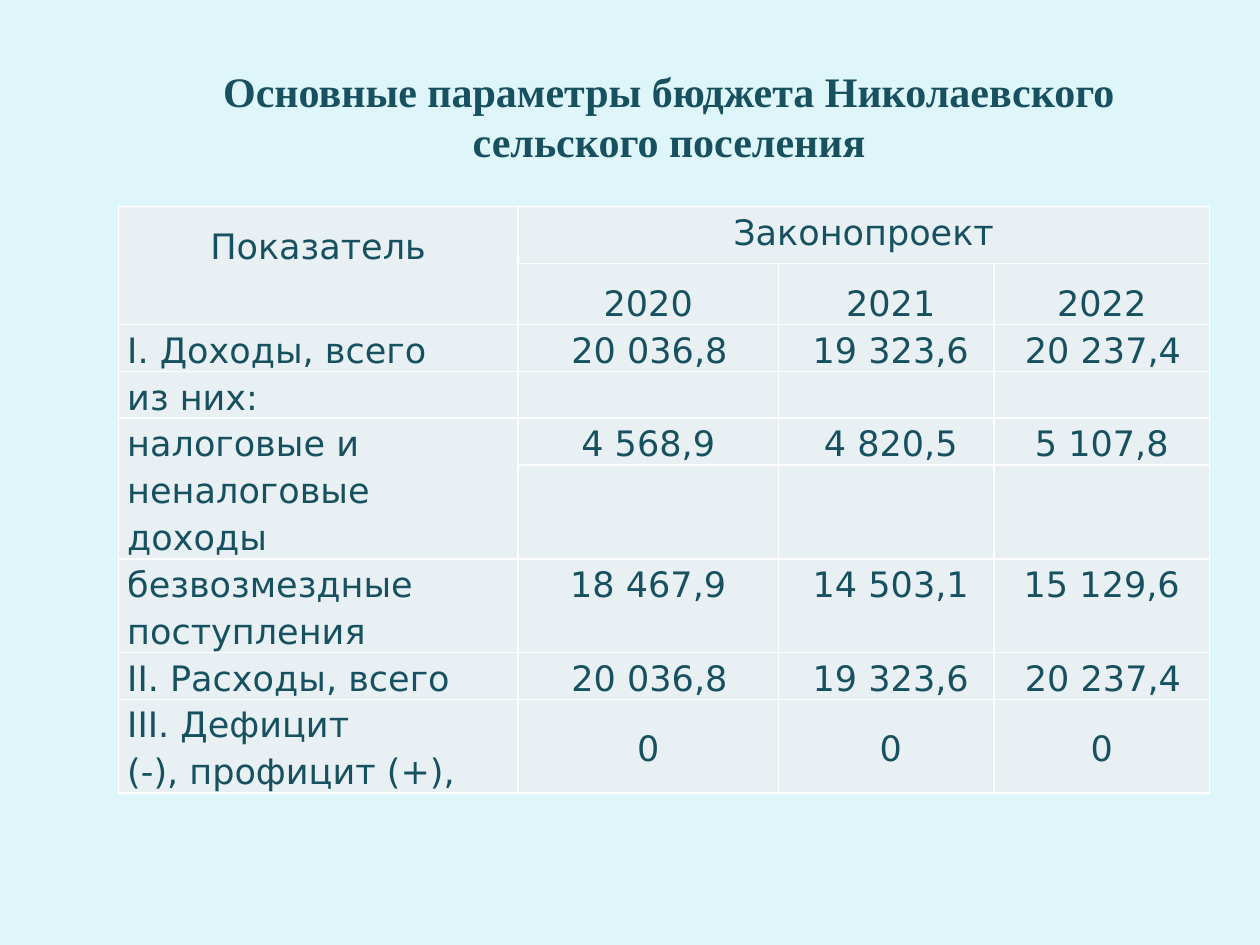
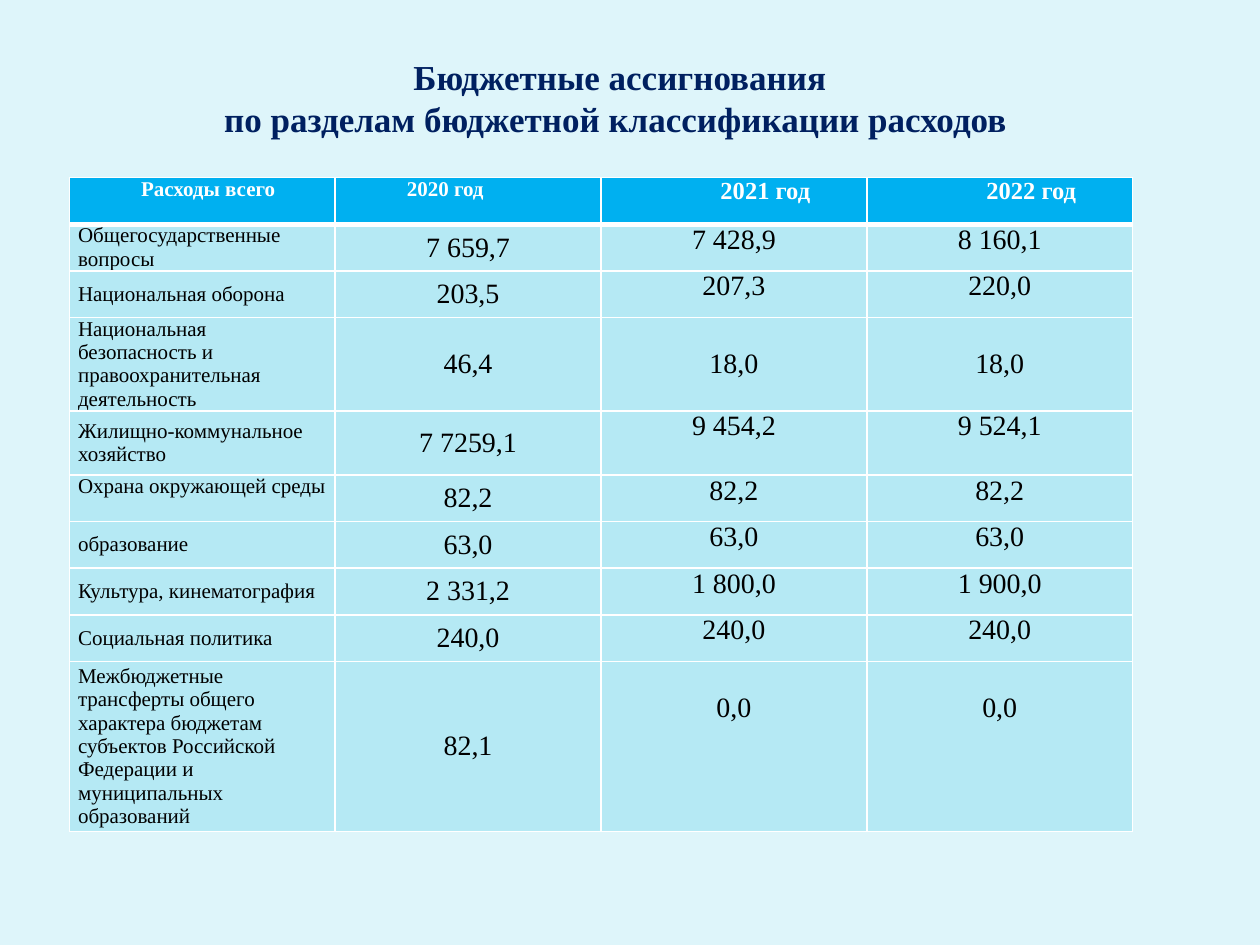
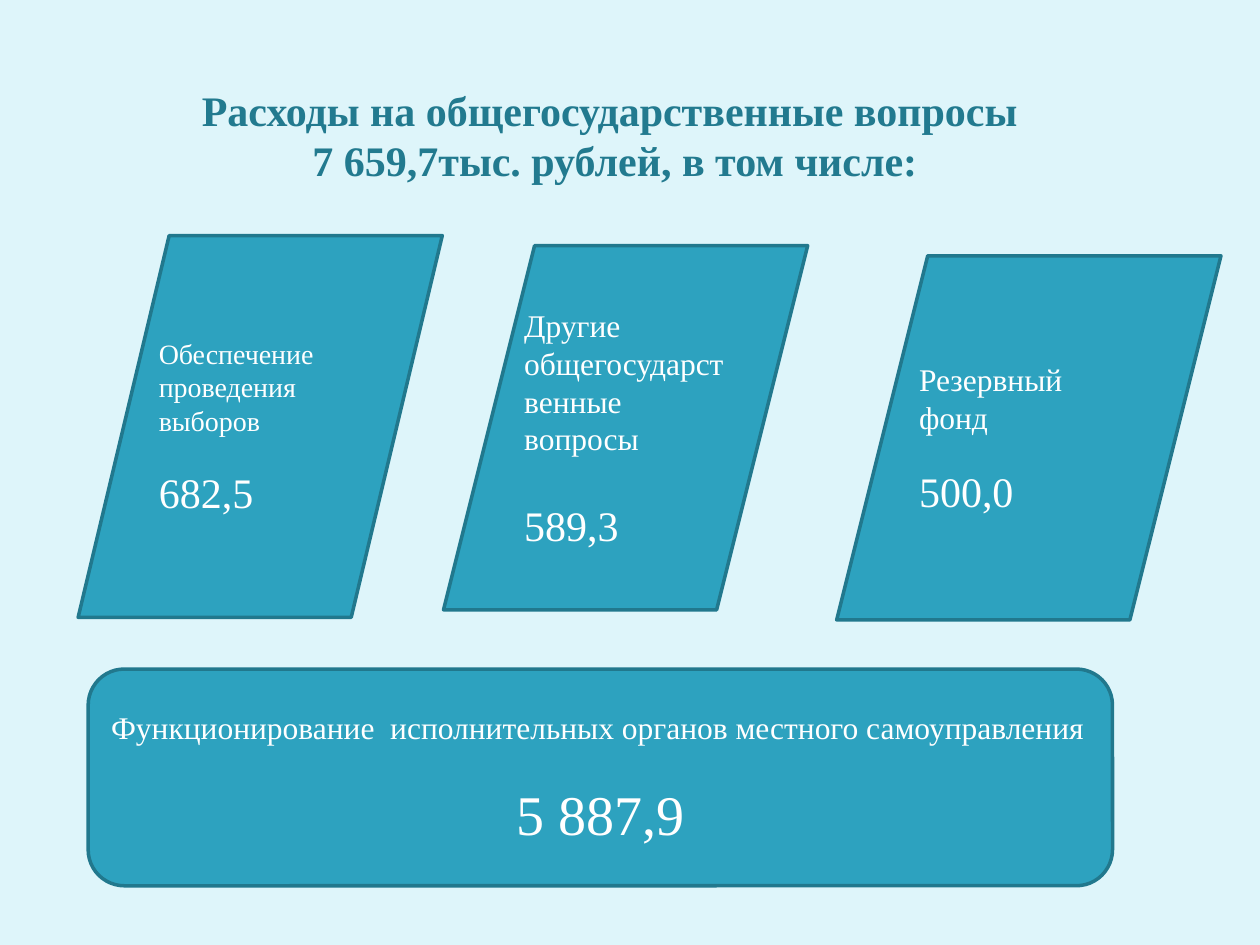
import pptx
import pptx.dml.color
import pptx.enum.shapes
import pptx.enum.text
import pptx.oxml
import pptx.oxml.ns
import pptx.util

Inches = pptx.util.Inches
Pt = pptx.util.Pt
RGBColor = pptx.dml.color.RGBColor
PP_ALIGN = pptx.enum.text.PP_ALIGN
MSO_ANCHOR = pptx.enum.text.MSO_ANCHOR
MSO_SHAPE = pptx.enum.shapes.MSO_SHAPE

BACKGROUND = RGBColor(0xDE, 0xF5, 0xFA)
DARK_TEAL = RGBColor(0x17, 0x51, 0x60)
NAVY = RGBColor(0x00, 0x20, 0x60)
TITLE_TEAL = RGBColor(0x22, 0x7A, 0x8F)
PALE_GREY = RGBColor(0xE8, 0xF0, 0xF4)
HEADER_BLUE = RGBColor(0x00, 0xB0, 0xF0)
PALE_BLUE = RGBColor(0xB5, 0xE9, 0xF4)
SHAPE_FILL = RGBColor(0x2D, 0xA2, 0xBF)
SHAPE_LINE = RGBColor(0x21, 0x78, 0x8D)
WHITE = RGBColor(0xFF, 0xFF, 0xFF)
BLACK = RGBColor(0x00, 0x00, 0x00)
SERIF = "Times New Roman"
SANS = "DejaVu Sans"

presentation = pptx.Presentation()
presentation.slide_width = Inches(10)
presentation.slide_height = Inches(7.5)
master_fill = presentation.slide_master.background.fill
master_fill.solid()
master_fill.fore_color.rgb = BACKGROUND


def add_titled_slide(text, size, color, left, top, width, height):
    slide = presentation.slides.add_slide(presentation.slide_layouts[5])
    title = slide.shapes.title
    title.left, title.top = Inches(left), Inches(top)
    title.width, title.height = Inches(width), Inches(height)
    frame = title.text_frame
    frame.text = text
    frame.word_wrap = True
    frame.auto_size = pptx.enum.text.MSO_AUTO_SIZE.NONE
    frame.vertical_anchor = MSO_ANCHOR.TOP
    for paragraph in frame.paragraphs:
        paragraph.alignment = PP_ALIGN.CENTER
        for run in paragraph.runs:
            run.font.name, run.font.size, run.font.bold = SERIF, Pt(size), True
            run.font.color.rgb = color
    return slide


def fill_cell(cell, text, font_name, size, color, fill, align=PP_ALIGN.CENTER, indent=0.0,
              spacing=None, middle=False, bold=False, top_margin=0.0, top_line=1, bottom_line=1):
    cell.text_frame.text = text
    cell.margin_left = cell.margin_right = Inches(0.07)
    cell.margin_top, cell.margin_bottom = Inches(top_margin), 0
    cell.vertical_anchor = MSO_ANCHOR.MIDDLE if middle else MSO_ANCHOR.TOP
    for paragraph in cell.text_frame.paragraphs:
        paragraph.alignment = align
        paragraph.line_spacing = spacing
        properties = paragraph._p.get_or_add_pPr()
        properties.set("marL", "0")
        properties.set("indent", str(Inches(indent)))
        for run in paragraph.runs:
            run.font.name, run.font.size, run.font.bold = font_name, Pt(size), bold
            run.font.color.rgb = color
    # White borders come before the fill in the cell properties
    for side, width in (("L", 1), ("R", 1), ("T", top_line), ("B", bottom_line)):
        cell._tc.get_or_add_tcPr().append(pptx.oxml.parse_xml(
            f'<a:ln{side} {pptx.oxml.ns.nsdecls("a")} w="{Pt(width)}"><a:solidFill>'
            f'<a:srgbClr val="{WHITE}"/></a:solidFill></a:ln{side}>'))
    cell.fill.solid()
    cell.fill.fore_color.rgb = fill


# Slide 1: main budget parameters
slide = add_titled_slide("Основные параметры бюджета Николаевского сельского поселения",
                         24, DARK_TEAL, 1.09, 0.47, 8.44, 0.91)
column_widths = [3.17, 2.07, 1.71, 1.71]
row_heights = [0.45, 0.38, 0.31, 0.31, 0.31, 0.33, 0.64, 0.31, 0.64]
# Each row: line spacing, indent of the outer years, label in the middle, values in the middle, texts
budget_rows = [
    (1.15, 0, False, False, ["Показатель", "Законопроект", "", ""]),
    (1.5, 0, False, False, ["", "2020", "2021", "2022"]),
    (1.15, 0.02, True, False, ["I. Доходы, всего", "20 036,8", "19 323,6", "20 237,4"]),
    (1.15, 0, True, False, ["из них:", "", "", ""]),
    (1.15, -0.07, False, False, ["налоговые и неналоговые доходы", "4 568,9", "4 820,5", "5 107,8"]),
    (1.15, 0, False, False, ["", "", "", ""]),
    (1.15, -0.07, False, False, ["безвозмездные поступления", "18 467,9", "14 503,1", "15 129,6"]),
    (1.15, 0.02, True, False, ["II. Расходы, всего", "20 036,8", "19 323,6", "20 237,4"]),
    (1.15, 0, False, True, ["III. Дефицит\n(-), профицит (+),", "0", "0", "0"]),
]
table = slide.shapes.add_table(len(budget_rows), 4, Inches(0.94), Inches(1.64),
                               Inches(sum(column_widths)), Inches(sum(row_heights))).table
table.first_row = table.horz_banding = False
for column, width in zip(table.columns, column_widths):
    column.width = Inches(width)
for row, height in zip(table.rows, row_heights):
    row.height = Inches(height)
for row, (spacing, outer_indent, label_middle, values_middle, texts) in enumerate(budget_rows):
    for column, text in enumerate(texts):
        is_label = column == 0
        indent = 0 if is_label or row == 0 else 0.07 if column == 2 else outer_indent
        fill_cell(table.cell(row, column), text, SANS, 20, DARK_TEAL, PALE_GREY,
                  align=PP_ALIGN.LEFT if is_label and row else PP_ALIGN.CENTER,
                  indent=-0.07 if is_label and row == 0 else indent,
                  spacing=1.5 if is_label and row == 0 else spacing,
                  middle=label_middle if is_label else values_middle)
for first, last in (((0, 0), (1, 0)), ((0, 1), (0, 3)), ((4, 0), (5, 0))):
    table.cell(*first).merge(table.cell(*last))

# Slide 2: allocations by section
slide = add_titled_slide("Бюджетные ассигнования\vпо разделам бюджетной классификации расходов ",
                         20, NAVY, 0.78, 0.39, 8.28, 0.77)
section_heads = ["Расходы всего", "2020 год", "2021 год", "2022 год"]
# Each row: height, top margin of the last two years, texts
section_rows = [
    (0.37, 0, ["Общегосударственные вопросы", "7 659,7", "7 428,9", "8 160,1"]),
    (0.37, 0, ["Национальная оборона", "203,5", "207,3", "220,0"]),
    (0.67, 0.25, ["Национальная безопасность и правоохранительная деятельность", "46,4", "18,0", "18,0"]),
    (0.51, 0, ["Жилищно-коммунальное хозяйство", "7 7259,1", "9 454,2", "9 524,1"]),
    (0.37, 0, ["Охрана окружающей среды", "82,2", "82,2", "82,2"]),
    (0.37, 0, ["образование", "63,0", "63,0", "63,0"]),
    (0.37, 0, ["Культура, кинематография", "2 331,2", "1 800,0", "1 900,0"]),
    (0.37, 0, ["Социальная политика", "240,0", "240,0", "240,0"]),
    (1.35, 0.25, ["Межбюджетные трансферты общего характера бюджетам субъектов Российской "
                  "Федерации и муниципальных образований", "82,1", "0,0", "0,0"]),
]
row_heights = [0.37] + [height for height, margin, texts in section_rows]
table = slide.shapes.add_table(len(row_heights), 4, Inches(0.55), Inches(1.41),
                               Inches(8.44), Inches(sum(row_heights))).table
table.horz_banding = False
for row, height in zip(table.rows, row_heights):
    row.height = Inches(height)
for column, text in enumerate(section_heads):
    fill_cell(table.cell(0, column), text, SERIF, 12 if column < 2 else 14, WHITE, HEADER_BLUE,
              align=PP_ALIGN.LEFT if column < 2 else PP_ALIGN.CENTER,
              indent=0.5, bold=True, bottom_line=3)
for row, (height, margin, texts) in enumerate(section_rows, start=1):
    for column, text in enumerate(texts):
        fill_cell(table.cell(row, column), text, SERIF, 16 if column else 12, BLACK, PALE_BLUE,
                  align=PP_ALIGN.CENTER if column else PP_ALIGN.LEFT,
                  middle=column == 1 or (column == 0 and text != "Охрана окружающей среды"),
                  top_margin=margin if column > 1 else 0, top_line=3 if row == 1 else 1)

# Slide 3: general government spending
slide = add_titled_slide("Расходы на общегосударственные вопросы \n7 659,7тыс. рублей, в том числе:",
                         24, TITLE_TEAL, 0.62, 0.62, 8.52, 0.91)
# Each block: shape, box, label, label size, gap, amount, amount size, amount alignment
spending_blocks = [
    (MSO_SHAPE.PARALLELOGRAM, (0.62, 1.87, 2.89, 3.03),
     "Обеспечение проведения выборов", 16, 17, "682,5", 24, PP_ALIGN.LEFT),
    (MSO_SHAPE.PARALLELOGRAM, (3.52, 1.95, 2.89, 2.89),
     "Другие общегосударственные вопросы", 18, 24, "589,3", 24, PP_ALIGN.LEFT),
    (MSO_SHAPE.PARALLELOGRAM, (6.64, 2.03, 3.05, 2.89),
     "Резервный фонд", 18, 17, "500,0", 24, PP_ALIGN.LEFT),
    (MSO_SHAPE.ROUNDED_RECTANGLE, (0.7, 5.31, 8.13, 1.72),
     "Функционирование  исполнительных органов местного самоуправления",
     18, 19, "5 887,9", 32, PP_ALIGN.CENTER),
]
for kind, box, label, label_size, gap, amount, amount_size, amount_align in spending_blocks:
    shape = slide.shapes.add_shape(kind, *[Inches(length) for length in box])
    shape.shadow.inherit = False
    shape.fill.solid()
    shape.fill.fore_color.rgb = SHAPE_FILL
    shape.line.color.rgb = SHAPE_LINE
    shape.line.width = Pt(2)
    frame = shape.text_frame
    frame.word_wrap = True
    frame.vertical_anchor = MSO_ANCHOR.MIDDLE
    frame.text = f"{label}\n{amount}"
    frame.paragraphs[1].space_before = Pt(gap)
    for paragraph, size, align in zip(frame.paragraphs, (label_size, amount_size),
                                      (PP_ALIGN.LEFT, amount_align)):
        paragraph.alignment = align
        font = paragraph.runs[0].font
        font.name, font.size = SERIF, Pt(size)
        font.color.rgb = WHITE

presentation.save("out.pptx")
